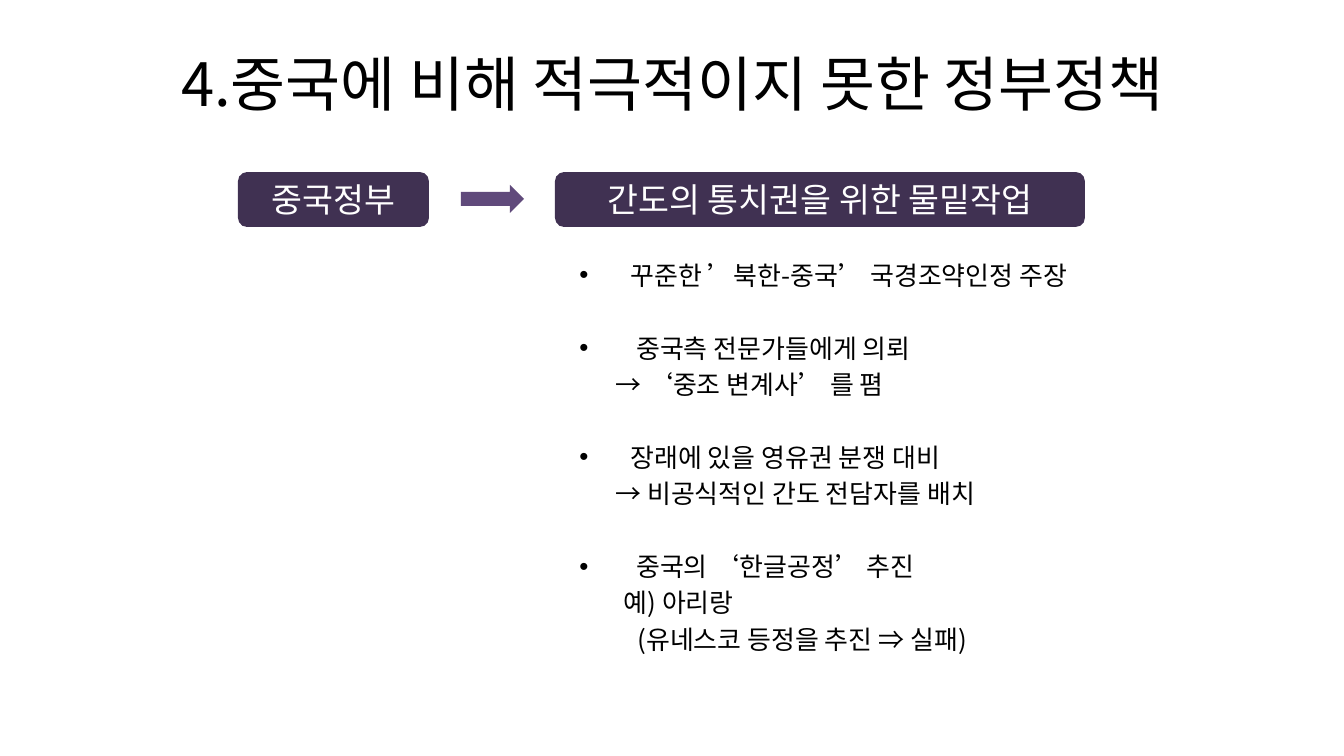
from lxml.etree import SubElement
from pptx import Presentation
from pptx.dml.color import RGBColor
from pptx.enum.shapes import MSO_SHAPE as Shape
from pptx.enum.text import MSO_ANCHOR as Anchor, MSO_AUTO_SIZE as AutoSize, PP_ALIGN as Align
from pptx.oxml.ns import qn
from pptx.util import Emu, Pt

EMU_PER_PX = 914400 / 134.4
FONT = "Noto Sans CJK KR"
COLORS = {"text": "000000", "label": "FFFFFF", "box": "403152", "arrow": "604A7B"}
LINE_PITCH = 19.5
HANGING = 51

POINTS = [
    ("꾸준한 ’북한-중국’ 국경조약인정 주장", []),
    (" 중국측 전문가들에게 의뢰", [("→ ‘중조 변계사’ 를 폄", 36)]),
    ("장래에 있을 영유권 분쟁 대비", [("→ 비공식적인 간도 전담자를 배치", 36)]),
    (" 중국의 ‘한글공정’ 추진", [("예) 아리랑", 44), ("(유네스코 등정을 추진 ⇒ 실패)", 58)]),
]


def px(length):
    return Emu(round(length * EMU_PER_PX))


def color(name):
    return RGBColor.from_string(COLORS[name])


def place(shape, left, top, width, height):
    shape.left, shape.top = px(left), px(top)
    shape.width, shape.height = px(width), px(height)


def style_paragraph(para, size, color_name):
    para.font.size = Pt(size)
    para.font.color.rgb = color(color_name)
    para.font.name = FONT
    properties = para.font._element
    SubElement(properties, qn("a:ea"), typeface=FONT)


def write_centered(shape, text, size, color_name):
    frame = shape.text_frame
    frame.auto_size = AutoSize.NONE
    frame.word_wrap = True
    frame.vertical_anchor = Anchor.MIDDLE
    frame.margin_top = frame.margin_bottom = 0
    para = frame.paragraphs[0]
    para.text = text
    para.alignment = Align.CENTER
    style_paragraph(para, size, color_name)


def add_block(page, kind, color_name, *bounds):
    block = page.shapes.add_shape(kind, *map(px, bounds))
    block.shadow.inherit = False
    block.fill.solid()
    block.fill.fore_color.rgb = color(color_name)
    block.line.fill.background()
    return block


def write_line(para, text, indent, bulleted, gap):
    para.text = text
    properties = para._p.get_or_add_pPr()
    properties.set("marL", str(px(indent)))
    properties.set("indent", str(px(-indent if bulleted else 0)))
    if bulleted:
        SubElement(properties, qn("a:buFont"), typeface="Arial")
        SubElement(properties, qn("a:buChar"), char="•")
    else:
        SubElement(properties, qn("a:buNone"))
    para.line_spacing = Pt(LINE_PITCH)
    para.space_before = Pt(gap)
    style_paragraph(para, 13.9, "text")


def write_points(body):
    frame = body.text_frame
    frame.auto_size = AutoSize.NONE
    frame.vertical_anchor = Anchor.TOP
    frame.margin_top = px(3)
    for index, (point, details) in enumerate(POINTS):
        para = frame.add_paragraph() if index else frame.paragraphs[0]
        write_line(para, point, HANGING, True, LINE_PITCH if index else 0)
        for detail, indent in details:
            write_line(frame.add_paragraph(), detail, indent, False, 0)


def main():
    deck = Presentation()
    deck.slide_width, deck.slide_height = px(1344), px(756)
    page = deck.slides.add_slide(deck.slide_layouts[1])

    title, body = page.placeholders
    place(title, 68, 44, 1210, 78)
    write_centered(title, "4.중국에 비해 적극적이지 못한 정부정책", 32, "text")
    place(body, 566, 251, 667, 468)
    write_points(body)

    government = add_block(page, Shape.ROUNDED_RECTANGLE, "box", 238, 172, 191, 55)
    write_centered(government, "중국정부", 18, "label")
    add_block(page, Shape.RIGHT_ARROW, "arrow", 461, 185, 63, 28)
    groundwork = add_block(page, Shape.FLOWCHART_ALTERNATE_PROCESS, "box", 555, 172, 530, 55)
    write_centered(groundwork, "간도의 통치권을 위한 물밑작업", 18, "label")

    deck.save("out.pptx")


if __name__ == "__main__":
    main()
